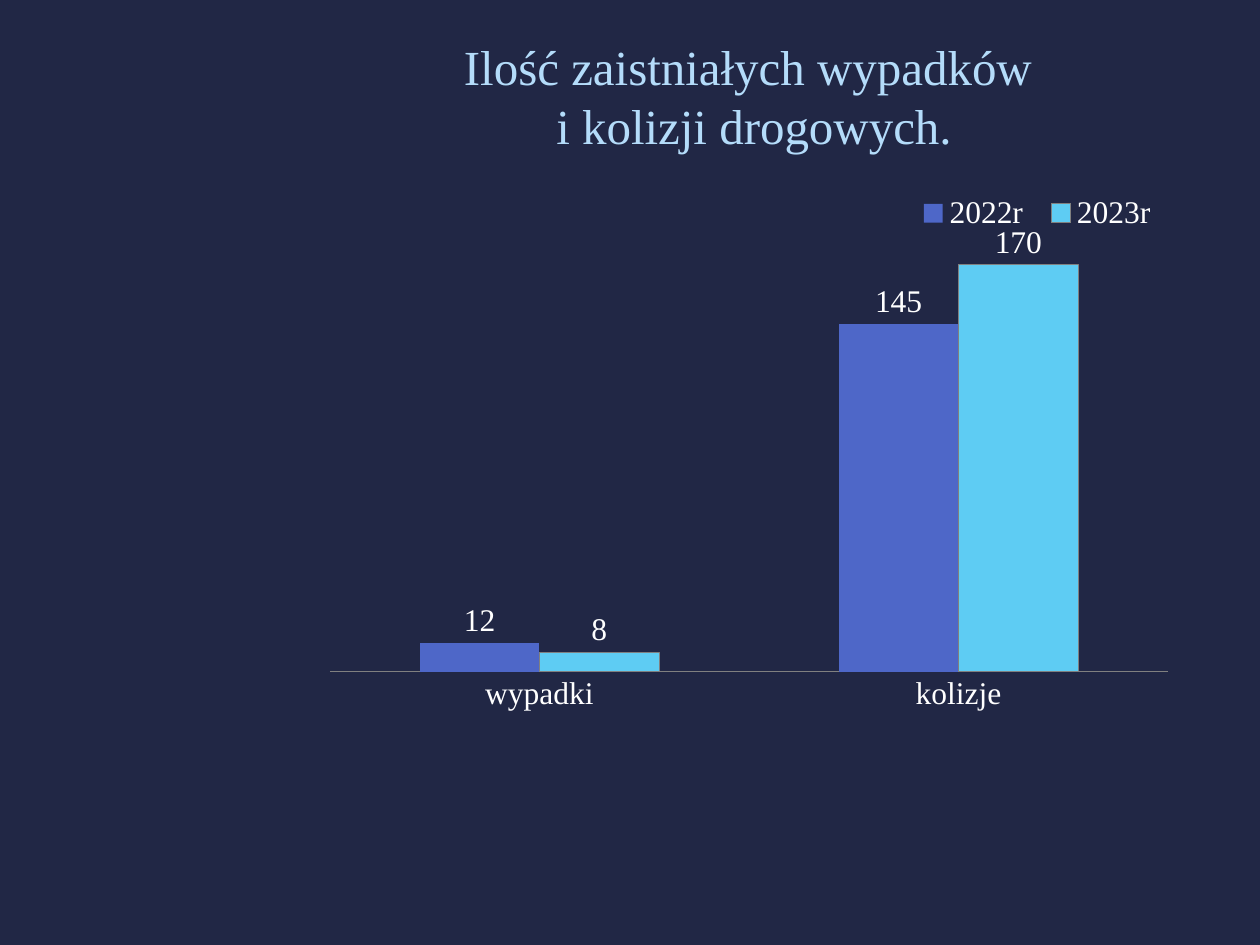
from lxml import etree
from pptx import Presentation
from pptx.chart.data import CategoryChartData
from pptx.dml.color import RGBColor
from pptx.enum import chart as chart_enum, text
from pptx.oxml.ns import qn
from pptx.util import Inches, Pt

# Content
TITLE = "Ilość zaistniałych wypadków \vi kolizji drogowych."
CATEGORIES = ["wypadki", "kolizje"]
SERIES = [
    {"name": "2022r", "values": [12, 145], "fill": "blue", "line": None},
    {"name": "2023r", "values": [8, 170], "fill": "cyan", "line": "gray"},
]
COLORS = {
    "background": "212745", "title": "B4DCFA", "text": "FFFFFF",
    "blue": "4E67C8", "cyan": "5ECCF3", "gray": "808080",
}
FONT = "Times New Roman"

# Places in inches; layouts as fractions of the chart
TITLE_BOX = (2.4, 0.21, 7.17, 1.1)
CHART_BOX = (2.48, 1.39, 6.93, 4.33)
PLOT_LAYOUT = {"x": 0.02, "y": 0.12, "w": 0.96, "h": 0.79}
LEGEND_LAYOUT = {"x": 0.68, "y": 0.03, "w": 0.3, "h": 0.08}


def color(name):
    return RGBColor.from_string(COLORS[name])


def style_font(font, size, color_name):
    for key, value in {"name": FONT, "size": Pt(size), "bold": False}.items():
        setattr(font, key, value)
    font.color.rgb = color(color_name)


def make_layout(fractions, inner=False):
    layout = etree.Element(qn("c:layout"))
    manual = etree.SubElement(layout, qn("c:manualLayout"))
    settings = [("layoutTarget", "inner")] if inner else []
    settings += [("xMode", "edge"), ("yMode", "edge"), *fractions.items()]
    for tag, value in settings:
        etree.SubElement(manual, qn(f"c:{tag}")).set("val", str(value))
    return layout


def add_title(slide):
    shape = slide.shapes.add_textbox(*map(Inches, TITLE_BOX))
    frame = shape.text_frame
    frame.word_wrap = True
    frame.vertical_anchor = text.MSO_ANCHOR.MIDDLE
    frame.text = TITLE
    paragraph = frame.paragraphs[0]
    paragraph.alignment = text.PP_ALIGN.CENTER
    for run in paragraph.runs:
        style_font(run.font, 28, "title")


def add_accident_chart(slide):
    data = CategoryChartData()
    data.categories = CATEGORIES
    for item in SERIES:
        data.add_series(item["name"], item["values"])
    chart = slide.shapes.add_chart(
        chart_enum.XL_CHART_TYPE.COLUMN_CLUSTERED, *map(Inches, CHART_BOX), data
    ).chart
    style_font(chart.font, 18, "text")
    chart.has_title = False

    # Axes
    value_axis, category_axis = chart.value_axis, chart.category_axis
    value_axis.minimum_scale, value_axis.maximum_scale = 0, 180
    value_axis.has_major_gridlines = False
    value_axis.visible = False
    category_axis.major_tick_mark = chart_enum.XL_TICK_MARK.NONE
    category_axis.format.line.color.rgb = color("gray")
    category_axis.format.line.width = Pt(0.75)

    # Columns and their labels
    plot = chart.plots[0]
    plot.gap_width, plot.overlap = 150, 0
    plot.vary_by_categories = False
    for series, item in zip(plot.series, SERIES):
        series.format.fill.solid()
        series.format.fill.fore_color.rgb = color(item["fill"])
        if item["line"]:
            series.format.line.color.rgb = color(item["line"])
            series.format.line.width = Pt(0.75)
        else:
            series.format.line.fill.background()
        labels = series.data_labels
        labels.show_value = True
        labels.position = chart_enum.XL_LABEL_POSITION.OUTSIDE_END
        style_font(labels.font, 18, "text")

    # Legend and plot placement
    chart.has_legend = True
    chart.legend.position = chart_enum.XL_LEGEND_POSITION.TOP
    chart.legend.include_in_layout = False
    style_font(chart.legend.font, 18, "text")
    root = chart.element
    for layout in root.xpath(".//c:plotArea/c:layout | .//c:legend/c:layout"):
        layout.getparent().remove(layout)
    root.xpath(".//c:plotArea")[0].insert(0, make_layout(PLOT_LAYOUT, inner=True))
    root.xpath(".//c:legendPos")[0].addnext(make_layout(LEGEND_LAYOUT))


def main():
    presentation = Presentation()
    presentation.slide_width, presentation.slide_height = Inches(10), Inches(7.5)
    slide = presentation.slides.add_slide(presentation.slide_layouts[6])
    slide.background.fill.solid()
    slide.background.fill.fore_color.rgb = color("background")
    add_title(slide)
    add_accident_chart(slide)
    presentation.save("out.pptx")


if __name__ == "__main__":
    main()
